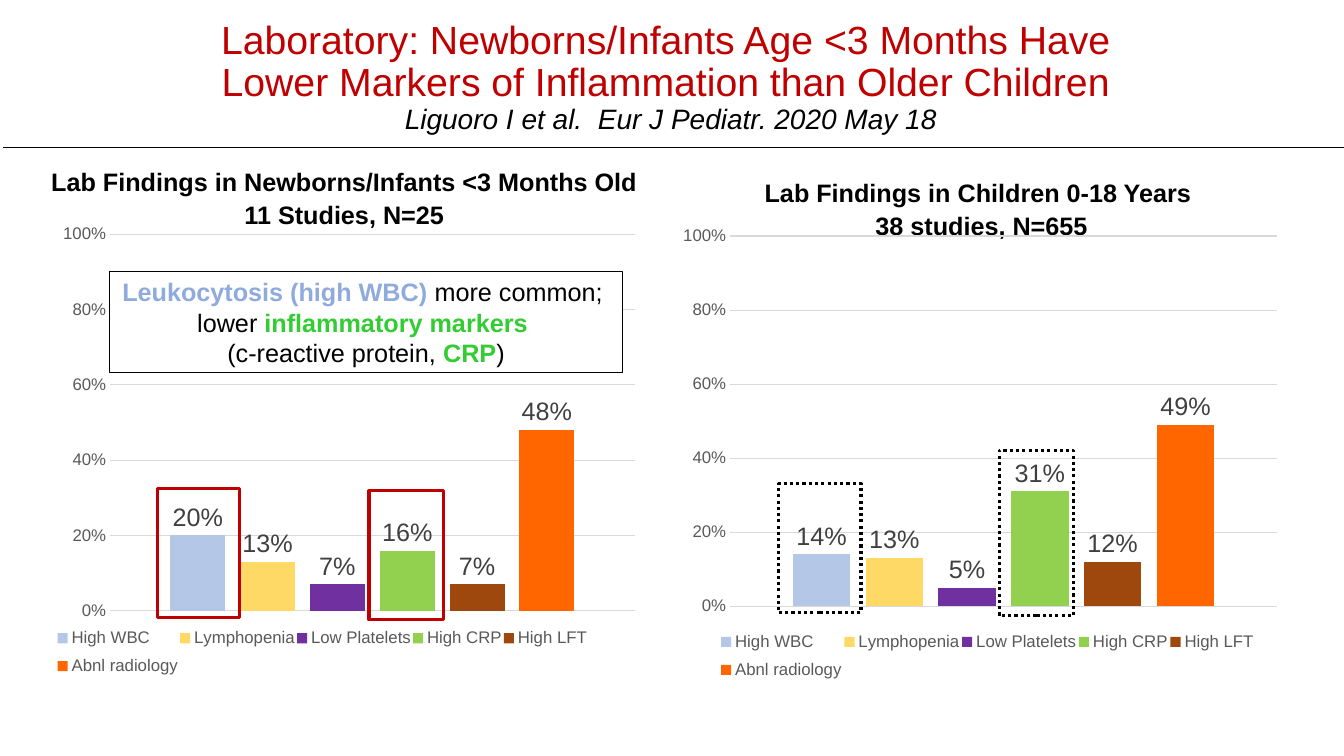
"""Build the slide comparing laboratory findings of young infants and older children."""
from dataclasses import dataclass
from lxml import etree
from pptx import Presentation
from pptx.chart import data
from pptx.dml.color import RGBColor
from pptx.enum import chart as ch, dml, shapes, text
from pptx.oxml import ns, parse_xml
from pptx.util import Inches, Pt


@dataclass(frozen=True)
class Theme:
    font: str = "Arial"
    ink: str = "000000"
    paper: str = "FFFFFF"
    red: str = "C00000"
    axis: str = "595959"
    label: str = "404040"
    grid: str = "D9D9D9"
    blue: str = "8FAADC"
    green: str = "33CC33"
    title: int = 28
    citation: int = 20
    body: int = 18
    small: int = 12


theme = Theme()
findings = {
    "Series 2": "ED7D31",
    "Series 3": "A5A5A5",
    "High WBC": "B4C7E7",
    "Lymphopenia": "FFD966",
    "Low Platelets": "7030A0",
    "High CRP": "92D050",
    "High LFT": "9E480E",
    "Abnl radiology": "FF6600",
}
panels = [
    dict(heading="Lab Findings in Newborns/Infants <3 Months Old\n11 Studies, N=25",
         heading_box=(0.28, 1.5, 6.27, 0.9), chart_box=(0.28, 2.23, 6.02, 4.66),
         plot=(0.135, 0.02, 0.865, 0.802), legend=(0.045, 0.84, 0.88, 0.14),
         shares=(None, None, 0.20, 0.13, 0.07, 0.16, 0.07, 0.48),
         frames=[(1.56, 4.85, 0.82, 1.28), (3.66, 4.87, 0.74, 1.28)],
         frame_color=theme.red, dash=dml.MSO_LINE.SOLID),
    dict(heading="Lab Findings in Children 0-18 Years \n38 studies, N=655",
         heading_box=(6.67, 1.61, 6.13, 0.9), chart_box=(6.53, 2.23, 6.14, 4.66),
         plot=(0.116, 0.024, 0.884, 0.788), legend=(0.097, 0.848, 0.87, 0.14),
         shares=(None, None, 0.14, 0.13, 0.05, 0.31, 0.12, 0.49),
         frames=[(7.72, 4.8, 0.82, 1.28), (9.91, 4.47, 0.74, 1.64)],
         frame_color=theme.ink, dash=dml.MSO_LINE.ROUND_DOT),
]
callout_lines = [
    [("Leukocytosis (high WBC) ", theme.blue, True), ("more common; ", theme.ink, False)],
    [("lower ", theme.ink, False), ("inflammatory markers ", theme.green, True)],
    [("(c-reactive protein, ", theme.ink, False), ("CRP", theme.green, True),
     (")", theme.ink, False)],
]


def style(font, size, color, bold=False, italic=False):
    font.name, font.size, font.bold, font.italic = theme.font, Pt(size), bold, italic
    font.color.rgb = RGBColor.from_string(color)


def manual_layout(box, inner=False):
    target = '<c:layoutTarget val="inner"/>' if inner else ""
    modes = "".join(f'<c:{axis}Mode val="edge"/>' for axis in "xy")
    sizes = "".join(f'<c:{side} val="{value}"/>' for side, value in zip("xywh", box))
    return parse_xml(f'<c:layout {ns.nsdecls("c")}><c:manualLayout>{target}{modes}{sizes}'
                     '</c:manualLayout></c:layout>')


prs = Presentation()
prs.slide_width, prs.slide_height = Inches(13.33), Inches(7.5)
slide = prs.slides.add_slide(prs.slide_layouts[6])

title = slide.shapes.add_textbox(*map(Inches, (-0.02, -0.06, 13.35, 1.67))).text_frame
title.word_wrap = True
title.vertical_anchor = text.MSO_ANCHOR.MIDDLE
title.text = ("Laboratory: Newborns/Infants Age <3 Months Have \v"
              "Lower Markers of Inflammation than Older Children \v"
              "Liguoro I et al.  Eur J Pediatr. 2020 May 18")
headline = title.paragraphs[0]
headline.alignment = text.PP_ALIGN.CENTER
headline.line_spacing = 0.9
*claim, citation = headline.runs
for run in claim:
    style(run.font, theme.title, theme.red)
style(citation.font, theme.citation, theme.ink, italic=True)

rule = slide.shapes.add_connector(shapes.MSO_CONNECTOR.STRAIGHT, Inches(0.03), Inches(1.46),
                                  Inches(13.35), Inches(1.46))
rule.line.color.rgb = RGBColor.from_string(theme.ink)
rule.line.width = Pt(0.5)
etree.SubElement(rule._element.spPr, ns.qn("a:effectLst"))

for panel in panels:
    heading = slide.shapes.add_textbox(*map(Inches, panel["heading_box"])).text_frame
    heading.word_wrap = True
    heading.vertical_anchor = text.MSO_ANCHOR.MIDDLE
    heading.text = panel["heading"]
    for paragraph in heading.paragraphs:
        paragraph.alignment = text.PP_ALIGN.CENTER
        paragraph.line_spacing = 1.1
        style(paragraph.runs[0].font, theme.body, theme.ink, bold=True)

    shares = data.CategoryChartData(number_format="0%")
    shares.categories = ["1"]
    for finding, share in zip(findings, panel["shares"]):
        shares.add_series(finding, [share])
    chart = slide.shapes.add_chart(ch.XL_CHART_TYPE.COLUMN_CLUSTERED,
                                   *map(Inches, panel["chart_box"]), shares).chart
    style(chart.font, theme.body, theme.ink)
    chart.has_title = False
    chart.category_axis.visible = False

    percent = chart.value_axis
    percent.minimum_scale, percent.maximum_scale, percent.major_unit = 0, 1, 0.2
    percent.major_tick_mark = percent.minor_tick_mark = ch.XL_TICK_MARK.NONE
    percent.format.line.fill.background()
    percent.major_gridlines.format.line.color.rgb = RGBColor.from_string(theme.grid)
    percent.major_gridlines.format.line.width = Pt(0.75)
    percent.tick_labels.number_format = "0%"
    percent.tick_labels.number_format_is_linked = False
    style(percent.tick_labels.font, theme.small, theme.axis)

    columns = chart.plots[0]
    columns.gap_width, columns.overlap = 219, -27
    columns.vary_by_categories = False
    for series, color, share in zip(columns.series, findings.values(), panel["shares"]):
        series.format.fill.solid()
        series.format.fill.fore_color.rgb = RGBColor.from_string(color)
        labels = series.data_labels
        labels.show_value = True
        labels.position = ch.XL_LABEL_POSITION.OUTSIDE_END
        labels.number_format, labels.number_format_is_linked = "0%", False
        style(labels.font, theme.body, theme.label)
        if share is None:
            series._element.remove(series._element.find(ns.qn("c:val")))

    chart.has_legend = True
    chart.legend.position = ch.XL_LEGEND_POSITION.BOTTOM
    chart.legend.include_in_layout = False
    style(chart.legend.font, theme.small, theme.axis)

    chart_root = chart._chartSpace.find(ns.qn("c:chart"))
    plot_area = chart_root.find(ns.qn("c:plotArea"))
    legend = chart_root.find(ns.qn("c:legend"))
    for part in (plot_area, legend):
        for layout in part.findall(ns.qn("c:layout")):
            part.remove(layout)
    plot_area.insert(0, manual_layout(panel["plot"], inner=True))
    legend.find(ns.qn("c:legendPos")).addnext(manual_layout(panel["legend"]))
    chart_root.addnext(parse_xml(f'<c:spPr {ns.nsdecls("c", "a")}><a:noFill/>'
                                 '<a:ln><a:noFill/></a:ln></c:spPr>'))

    for box in panel["frames"]:
        frame = slide.shapes.add_shape(shapes.MSO_SHAPE.RECTANGLE, *map(Inches, box))
        frame.shadow.inherit = False
        frame.fill.background()
        frame.line.color.rgb = RGBColor.from_string(panel["frame_color"])
        frame.line.width = Pt(2.25)
        frame.line.dash_style = panel["dash"]

callout = slide.shapes.add_shape(shapes.MSO_SHAPE.RECTANGLE,
                                 *map(Inches, (1.09, 2.69, 5.08, 1.01)))
callout.shadow.inherit = False
callout.fill.solid()
callout.fill.fore_color.rgb = RGBColor.from_string(theme.paper)
callout.line.color.rgb = RGBColor.from_string(theme.ink)
callout.line.width = Pt(0.75)
message = callout.text_frame
message.word_wrap = False
message.text = "\n".join("".join(words for words, *_ in line) for line in callout_lines)
for paragraph, line in zip(message.paragraphs, callout_lines):
    paragraph.clear()
    paragraph.alignment = text.PP_ALIGN.CENTER
    for words, color, bold in line:
        run = paragraph.add_run()
        run.text = words
        style(run.font, theme.body, color, bold)

prs.save("out.pptx")
